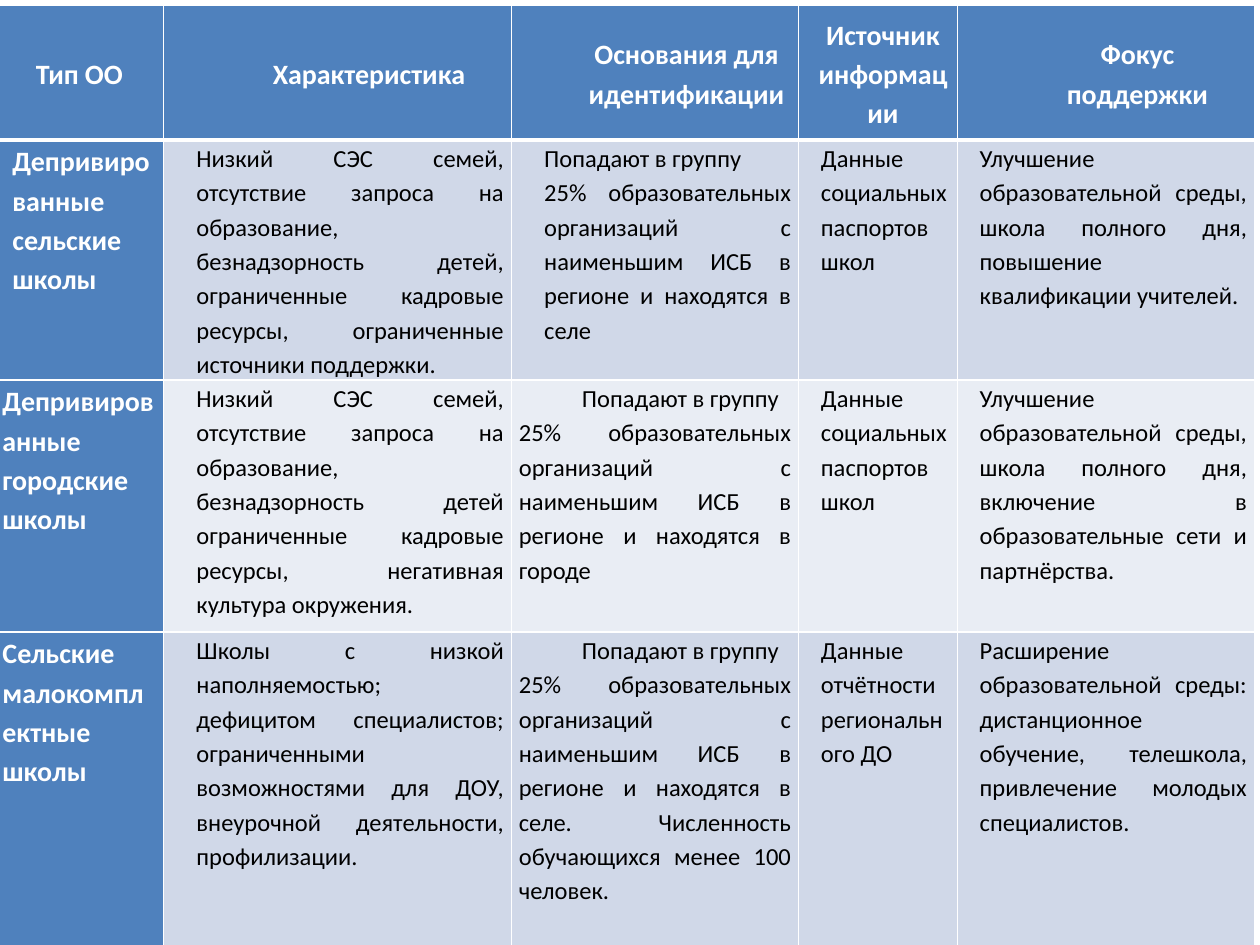
from dataclasses import dataclass

from lxml import etree
from pptx import Presentation
from pptx import util as u
from pptx.dml.color import RGBColor
from pptx.enum import text
from pptx.oxml.ns import qn

LEFT, CENTER, JUSTIFY = text.PP_ALIGN.LEFT, text.PP_ALIGN.CENTER, text.PP_ALIGN.JUSTIFY


@dataclass(frozen=True)
class Theme:
    font: str = "Calibri"
    heading_size: int = 16
    body_size: int = 14
    heading_fill: str = "4F81BD"
    bands: tuple = ("D0D8E8", "E9EDF4")
    heading_ink: str = "FFFFFF"
    body_ink: str = "000000"
    border: str = "FFFFFF"
    border_width: int = 1
    header_rule: int = 3
    line_spacing: float = 1.15
    inset: float = 0.15


THEME = Theme()
COLUMN_WIDTHS = (3.4, 7.01, 5.79, 3.2, 5.99)
ROW_HEIGHTS = (2.72, 4.6, 5.08, 6.55)
WIDE, MEDIUM, NARROW, SLIGHT = 1.27, 0.51, 0.3, 0.2

HEADINGS = (
    ("Тип ОО", 0),
    ("Характеристика", WIDE),
    ("Основания для идентификации", WIDE),
    ("Источник информации", SLIGHT),
    ("Фокус поддержки", WIDE),
)
GROUP = "Попадают в группу"
QUARTER = "25% образовательных организаций с наименьшим ИСБ в регионе и находятся в "
PASSPORTS = "Данные социальных паспортов школ"

SCHOOLS = (
    (
        ("Депривированные сельские школы", LEFT, SLIGHT),
        "Низкий СЭС семей, отсутствие запроса на образование, безнадзорность детей, "
        "ограниченные кадровые ресурсы, ограниченные источники поддержки.",
        ((GROUP, LEFT, MEDIUM), (QUARTER + "селе", JUSTIFY, MEDIUM)),
        PASSPORTS,
        "Улучшение образовательной среды, школа полного дня, "
        "повышение квалификации учителей.",
    ),
    (
        ("Депривированные городские школы", JUSTIFY, 0),
        "Низкий СЭС семей, отсутствие запроса на образование, безнадзорность детей "
        "ограниченные кадровые ресурсы, негативная культура окружения.",
        ((GROUP, JUSTIFY, WIDE), (QUARTER + "городе", JUSTIFY, 0)),
        PASSPORTS,
        "Улучшение образовательной среды, школа полного дня, "
        "включение в образовательные сети и партнёрства.",
    ),
    (
        ("Сельские малокомплектные школы", JUSTIFY, 0),
        "Школы с низкой наполняемостью; дефицитом специалистов; ограниченными "
        "возможностями для ДОУ, внеурочной деятельности, профилизации.",
        ((GROUP, JUSTIFY, WIDE),
         (QUARTER + "селе. Численность обучающихся менее 100 человек.", JUSTIFY, 0)),
        "Данные отчётности регионального ДО",
        "Расширение образовательной среды: дистанционное обучение, телешкола, "
        "привлечение молодых специалистов.",
    ),
)


def set_borders(cell, top, bottom):
    properties = cell._tc.get_or_add_tcPr()
    widths = {"L": THEME.border_width, "R": THEME.border_width, "T": top, "B": bottom}
    for position, (side, width) in enumerate(widths.items()):
        line = etree.Element(qn(f"a:ln{side}"), w=str(u.Pt(width)))
        fill = etree.SubElement(line, qn("a:solidFill"))
        etree.SubElement(fill, qn("a:srgbClr"), val=THEME.border)
        properties.insert(position, line)


def write_paragraph(paragraph, wording, align, indent, heading):
    paragraph.text = wording
    paragraph.alignment = align
    paragraph.line_spacing = THEME.line_spacing
    properties = paragraph._p.get_or_add_pPr()
    properties.set("marL", str(u.Cm(indent)))
    properties.set("indent", "0")
    font = paragraph.font
    font.name = THEME.font
    font.bold = heading
    font.size = u.Pt(THEME.heading_size if heading else THEME.body_size)
    font.color.rgb = RGBColor.from_string(THEME.heading_ink if heading else THEME.body_ink)


def fill_cell(cell, paragraphs, fill, heading=False):
    cell.margin_left = cell.margin_right = u.Cm(THEME.inset)
    cell.margin_top = cell.margin_bottom = 0
    cell.fill.solid()
    cell.fill.fore_color.rgb = RGBColor.from_string(fill)
    frame = cell.text_frame
    for number, (wording, align, indent) in enumerate(paragraphs):
        paragraph = frame.add_paragraph() if number else frame.paragraphs[0]
        write_paragraph(paragraph, wording, align, indent, heading)


def add_header(table):
    for column, (heading, indent) in enumerate(HEADINGS):
        cell = table.cell(0, column)
        fill_cell(cell, [(heading, CENTER, indent)], THEME.heading_fill, heading=True)
        cell.vertical_anchor = text.MSO_ANCHOR.MIDDLE
        set_borders(cell, THEME.border_width, THEME.header_rule)


def add_school(table, row, school):
    kind, traits, grounds, source, focus = school
    columns = (
        [kind],
        [(traits, JUSTIFY, MEDIUM)],
        grounds,
        [(source, LEFT, NARROW)],
        [(focus, JUSTIFY, NARROW)],
    )
    band = THEME.bands[(row - 1) % len(THEME.bands)]
    top = THEME.header_rule if row == 1 else THEME.border_width
    for column, paragraphs in enumerate(columns):
        cell = table.cell(row, column)
        is_kind = column == 0
        fill_cell(cell, paragraphs, THEME.heading_fill if is_kind else band, is_kind)
        set_borders(cell, top, THEME.border_width)


def add_school_table(slide):
    table = slide.shapes.add_table(
        len(ROW_HEIGHTS), len(COLUMN_WIDTHS), u.Cm(-0.1), u.Cm(0.1),
        u.Cm(sum(COLUMN_WIDTHS)), u.Cm(sum(ROW_HEIGHTS))).table
    for column, width in zip(table.columns, COLUMN_WIDTHS):
        column.width = u.Cm(width)
    for row, height in zip(table.rows, ROW_HEIGHTS):
        row.height = u.Cm(height)
    add_header(table)
    for row, school in enumerate(SCHOOLS, start=1):
        add_school(table, row, school)


def main():
    deck = Presentation()
    deck.slide_width, deck.slide_height = u.Cm(25.4), u.Cm(19.05)
    slide = deck.slides.add_slide(deck.slide_layouts[6])
    add_school_table(slide)
    deck.save("out.pptx")


if __name__ == "__main__":
    main()
